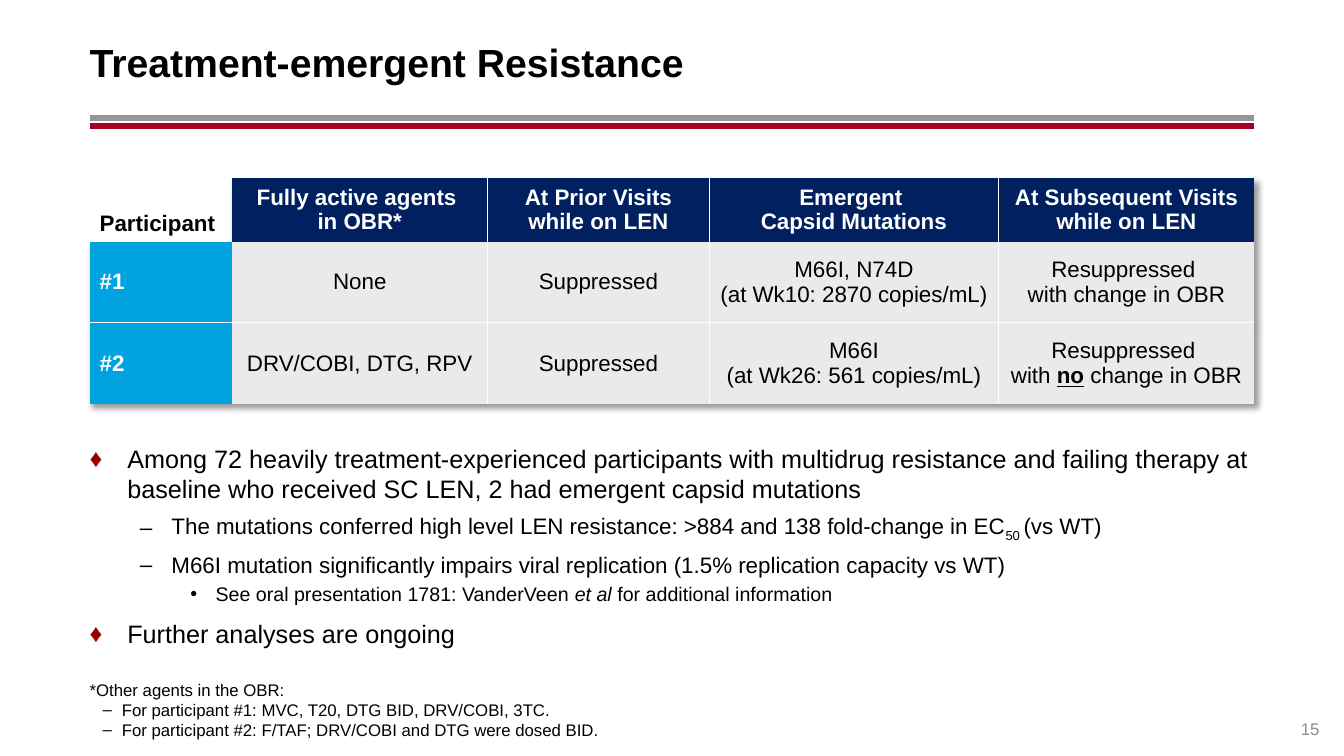
from dataclasses import dataclass

from lxml import etree
from pptx import Presentation
from pptx import util as u
from pptx.dml.color import RGBColor
from pptx.enum import shapes, text
from pptx.oxml import parse_xml
from pptx.oxml.ns import qn

Pt = u.Pt
NS = 'xmlns:a="http://schemas.openxmlformats.org/drawingml/2006/main"'
PLAIN = "{2D5ABB26-0587-4C30-8999-92F81FD0307C}"  # no style, no grid
LEFT, MID, RIGHT = text.PP_ALIGN.LEFT, text.PP_ALIGN.CENTER, text.PP_ALIGN.RIGHT
TOP, CENTER, BASE = (text.MSO_ANCHOR.TOP, text.MSO_ANCHOR.MIDDLE,
                     text.MSO_ANCHOR.BOTTOM)


@dataclass(frozen=True)
class Theme:
    face: str = "Arial"
    black: str = "000000"
    white: str = "FFFFFF"
    gray: str = "969696"
    red: str = "A50021"
    mark: str = "990000"
    navy: str = "002060"
    blue: str = "00A3E0"
    pale: str = "EAEAEA"
    dim: str = "8C8C8C"
    title: int = 28
    levels: tuple = (18, 16, 14)
    cell: int = 16
    note: int = 12


T = Theme()


# Text helpers
def add_text(par, runs, size, color=T.black, bold=False, align=LEFT):
    """Fill a paragraph; runs is a string or a list of (string, style)."""
    par.alignment = align
    font = par.font
    font.name, font.size, font.bold = T.face, Pt(size), bold
    font.color.rgb = RGBColor.from_string(color)
    for words, style in [(runs, "")] if isinstance(runs, str) else runs:
        run = par.add_run()
        run.text = words
        if style == "strong":
            run.font.bold = run.font.underline = True
        elif style == "slant":
            run.font.italic = True
        elif style == "sub":
            run.font._element.set("baseline", "-25000")


def add_mark(par, sign, left, hang, color=T.black):
    props = par._p.get_or_add_pPr()
    props.set("marL", str(Pt(left)))
    props.set("indent", str(-Pt(hang)))
    for part in (f'<a:buClr {NS}><a:srgbClr val="{color}"/></a:buClr>',
                 f'<a:buFont {NS} typeface="{T.face}"/>',
                 f'<a:buChar {NS} char="{sign}"/>'):
        props.append(parse_xml(part))


def add_frame(slide, box, anchor=TOP, pads=(0, 0, 0, 0)):
    frame = slide.shapes.add_textbox(*map(Pt, box)).text_frame
    frame.word_wrap = True
    frame.vertical_anchor = anchor
    (frame.margin_left, frame.margin_top,
     frame.margin_right, frame.margin_bottom) = map(Pt, pads)
    return frame


def next_par(frame, index):
    return frame.add_paragraph() if index else frame.paragraphs[0]


# Title with its two rules
def add_head(slide, box, title):
    left, top, width, height = box
    frame = add_frame(slide, box, CENTER, (0, 3.6, 7.2, 3.6))
    add_text(frame.paragraphs[0], title, T.title, bold=True)
    for gap, color in ((9.3, T.gray), (15.2, T.red)):
        y = Pt(top + height + gap)
        rule = slide.shapes.add_connector(
            shapes.MSO_CONNECTOR.STRAIGHT, Pt(left), y, Pt(left + width), y)
        rule.line.width = Pt(4.25)
        rule.line.color.rgb = RGBColor.from_string(color)
        etree.SubElement(rule._element.spPr, qn("a:effectLst"))


# Table of cases
def add_edges(cell, sides):
    props = cell._tc.get_or_add_tcPr()
    for place, side in enumerate(sides):
        props.insert(place, parse_xml(
            f'<a:ln{side} {NS} w="{Pt(1)}"><a:solidFill>'
            f'<a:srgbClr val="{T.white}"/></a:solidFill></a:ln{side}>'))


def add_cell(cell, row, col, words):
    head, side = row == 0, col == 0
    cell.vertical_anchor = BASE if head and side else CENTER
    cell.margin_left = cell.margin_right = Pt(7.2 if side else 0)
    if head and side:
        cell.fill.background()
    else:
        fill = T.navy if head else T.blue if side else T.pale
        cell.fill.solid()
        cell.fill.fore_color.rgb = RGBColor.from_string(fill)
    color = T.white if head != side else T.black
    for index, line in enumerate(words):
        add_text(next_par(cell.text_frame, index), line, T.cell, color,
                 head or side, LEFT if side else MID)
    rules = (("L", col > 1), ("R", 0 < col < 4), ("T", row == 2), ("B", row == 1))
    add_edges(cell, [name for name, shown in rules if shown])


def add_grid(slide, box, cols, rows, cells):
    grid = slide.shapes.add_table(len(rows), len(cols), *map(Pt, box)).table
    grid.first_row = grid.horz_banding = False
    props = grid._tbl.tblPr
    props.find(qn("a:tableStyleId")).text = PLAIN
    props.insert(0, parse_xml(
        f'<a:effectLst {NS}><a:outerShdw blurRad="{Pt(4)}" dist="{Pt(3)}" '
        'dir="2700000" algn="tl" rotWithShape="0"><a:srgbClr val="000000">'
        '<a:alpha val="40000"/></a:srgbClr></a:outerShdw></a:effectLst>'))
    for col, width in zip(grid.columns, cols):
        col.width = Pt(width)
    for row, height in zip(grid.rows, rows):
        row.height = Pt(height)
    for r, line in enumerate(cells):
        for c, words in enumerate(line):
            add_cell(grid.cell(r, c), r, c, words)


# Bulleted findings
def add_points(slide, box, points):
    frame = add_frame(slide, box, TOP, (0, 3.6, 7.2, 3.6))
    looks = (("♦", 27, 27, T.mark, 9), ("–", 58.5, 22.5, T.black, 6),
             ("•", 90, 18, T.black, 3))
    for index, (level, runs) in enumerate(points):
        par = next_par(frame, index)
        *mark, space = looks[level]
        par.level = level
        add_mark(par, *mark)
        par.space_before = Pt(space)
        add_text(par, runs, T.levels[level])


# Footnote and page number
def add_notes(slide, box, lead, notes):
    frame = add_frame(slide, box, BASE)
    add_text(frame.paragraphs[0], lead, T.note)
    for note in notes:
        par = frame.add_paragraph()
        add_mark(par, "–", 23, 13.7)
        add_text(par, note, T.note)


def add_page(slide, box, page):
    frame = add_frame(slide, box, BASE)
    add_text(frame.paragraphs[0], page, T.note, T.dim, align=RIGHT)


CELLS = [
    [["Participant"], ["Fully active agents ", "in OBR*"],
     ["At Prior Visits", "while on LEN"], ["Emergent ", "Capsid Mutations"],
     ["At Subsequent Visits while on LEN"]],
    [["#1"], ["None"], ["Suppressed"],
     ["M66I, N74D", "(at Wk10: 2870 copies/mL)"],
     ["Resuppressed ", "with change in OBR"]],
    [["#2"], ["DRV/COBI, DTG, RPV"], ["Suppressed"],
     ["M66I", "(at Wk26: 561 copies/mL)"],
     ["Resuppressed ",
      [("with ", ""), ("no", "strong"), (" change in OBR", "")]]],
]
POINTS = [
    (0, "Among 72 heavily treatment-experienced participants with multidrug "
        "resistance and failing therapy at baseline who received SC LEN, "
        "2 had emergent capsid mutations"),
    (1, [("The mutations conferred high level LEN resistance: >884 and 138 "
          "fold-change in EC", ""), ("50 ", "sub"), ("(vs WT)", "")]),
    (1, "M66I mutation significantly impairs viral replication "
        "(1.5% replication capacity vs WT)"),
    (2, [("See oral presentation 1781: VanderVeen ", ""), ("et al ", "slant"),
         ("for additional information", "")]),
    (0, "Further analyses are ongoing"),
]
NOTES = ["For participant #1: MVC, T20, DTG BID, DRV/COBI, 3TC.",
         "For participant #2: F/TAF; DRV/COBI and DTG were dosed BID."]


def main():
    deck = Presentation()
    deck.slide_width, deck.slide_height = Pt(960), Pt(540)
    slide = deck.slides.add_slide(deck.slide_layouts[6])
    left, width = 64, 832
    add_head(slide, (left, 13, width, 62), "Treatment-emergent Resistance")
    add_points(slide, (left, 313.2, 847, 160.6), POINTS)
    add_notes(slide, (left, 486, width, 42.5), "*Other agents in the OBR:", NOTES)
    add_page(slide, (left + width, 499, 46.5, 28.8), "15")
    add_grid(slide, (left, 127, width, 159), (101.7, 182.6, 158.4, 206.6, 182.7),
             (43, 58, 58), CELLS)
    deck.save("out.pptx")


if __name__ == "__main__":
    main()
